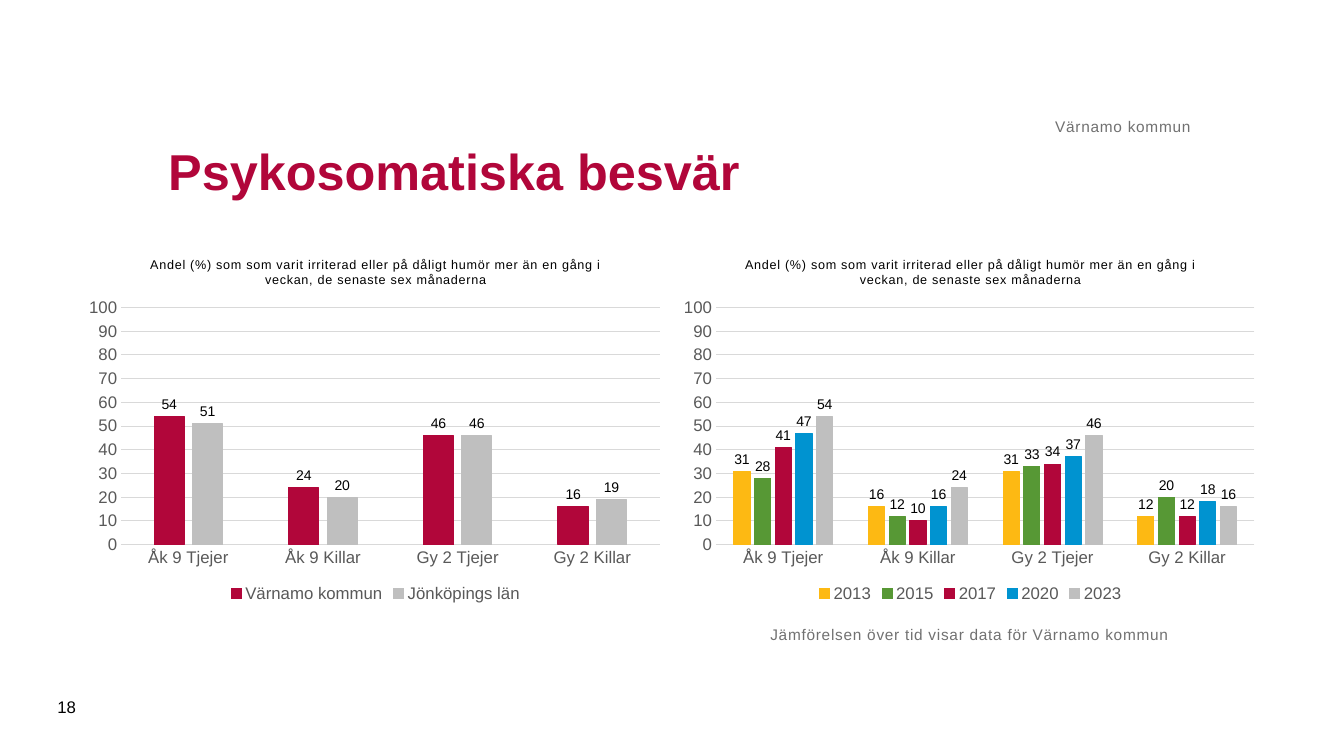
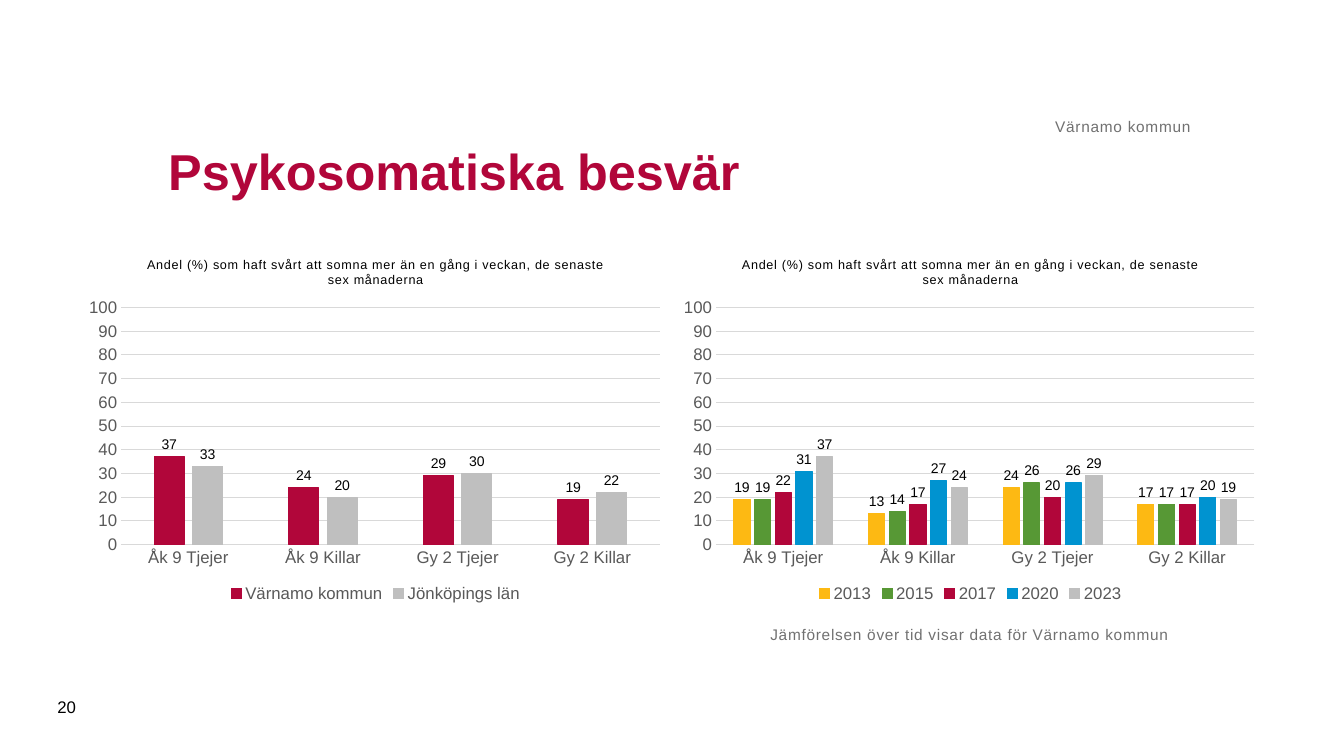
from lxml import etree
from pptx import Presentation
from pptx.chart.data import CategoryChartData
from pptx.dml.color import RGBColor
from pptx.enum.chart import XL_CHART_TYPE, XL_LABEL_POSITION, XL_LEGEND_POSITION, XL_TICK_MARK
from pptx.enum.text import MSO_ANCHOR, PP_ALIGN
from pptx.oxml.ns import qn
from pptx.util import Inches, Pt

COLUMNS = XL_CHART_TYPE.COLUMN_CLUSTERED
OUTSIDE = XL_LABEL_POSITION.OUTSIDE_END
BOTTOM = XL_LEGEND_POSITION.BOTTOM
NO_TICK = XL_TICK_MARK.NONE
LEFT, CENTER, RIGHT = PP_ALIGN.LEFT, PP_ALIGN.CENTER, PP_ALIGN.RIGHT
ANCHOR_TOP, ANCHOR_MIDDLE, ANCHOR_BOTTOM = MSO_ANCHOR.TOP, MSO_ANCHOR.MIDDLE, MSO_ANCHOR.BOTTOM


class Theme:
    font = "Arial"
    black = RGBColor.from_string("000000")
    red = RGBColor.from_string("B1063A")
    silver = RGBColor.from_string("BFBFBF")
    yellow = RGBColor.from_string("FDB913")
    green = RGBColor.from_string("579835")
    blue = RGBColor.from_string("0093D0")
    axis_text = RGBColor.from_string("595959")
    note = RGBColor.from_string("717171")
    grid = RGBColor.from_string("D9D9D9")
    title_size = 36
    axis_size = 12
    note_size = 11
    label_size = 10
    chart_title_size = 9
    hairline = Pt(0.75)
    number_format = "#,##0;#,##0"


CATEGORIES = ["Åk 9 Tjejer", "Åk 9 Killar", "Gy 2 Tjejer", "Gy 2 Killar"]
REGIONS = [("Värnamo kommun", Theme.red), ("Jönköpings län", Theme.silver)]
YEARS = [("2013", Theme.yellow), ("2015", Theme.green), ("2017", Theme.red),
         ("2020", Theme.blue), ("2023", Theme.silver)]
CHART_LEFTS = [0.79, 6.69]
PLOT_BOX = [("x", 0.07), ("y", 0.18), ("w", 0.91), ("h", 0.65)]

SLIDES = [
    {
        "number": "18",
        "question": "Andel (%) som som varit irriterad eller på dåligt humör mer än en gång i veckan, "
                    "de senaste sex månaderna",
        "regions": [[54, 24, 46, 16], [51, 20, 46, 19]],
        "years": [[31, 16, 31, 12], [28, 12, 33, 20], [41, 10, 34, 12],
                  [47, 16, 37, 18], [54, 24, 46, 16]],
    },
    {
        "number": "20",
        "question": "Andel (%) som haft svårt att somna mer än en gång i veckan, "
                    "de senaste sex månaderna",
        "regions": [[37, 24, 29, 19], [33, 20, 30, 22]],
        "years": [[19, 13, 24, 17], [19, 14, 26, 17], [22, 17, 20, 17],
                  [31, 27, 26, 20], [37, 24, 29, 19]],
    },
]


def write(tf, text, size=Theme.note_size, color=Theme.note, bold=False, align=LEFT,
          anchor=None, inset=True, spacing=0):
    if anchor is not None:
        tf.word_wrap = True
        tf.vertical_anchor = anchor
    if not inset:
        tf.margin_left = tf.margin_top = tf.margin_right = tf.margin_bottom = 0
    p = tf.paragraphs[0]
    p.alignment = align
    r = p.add_run()
    r.text = text
    style_font(r.font, size, color, bold)
    if spacing:
        r._r.get_or_add_rPr().set("spc", str(int(spacing * 100)))


def style_font(font, size, color, bold=False):
    font.name = Theme.font
    font.size = Pt(size)
    font.color.rgb = color
    font.bold = bold


prs = Presentation()
prs.slide_width, prs.slide_height = Inches(13.33), Inches(7.5)

for content in SLIDES:
    s = prs.slides.add_slide(prs.slide_layouts[6])

    charts = [(REGIONS, content["regions"]), (YEARS, content["years"])]
    for left, (legend, rows) in zip(CHART_LEFTS, charts):
        data = CategoryChartData(number_format=Theme.number_format)
        data.categories = CATEGORIES
        for (name, color), values in zip(legend, rows):
            data.add_series(name, values)
        chart = s.shapes.add_chart(COLUMNS, Inches(left), Inches(2.4),
                                   Inches(5.87), Inches(3.62), data).chart
        style_font(chart.font, Theme.label_size, Theme.black)
        chart.has_title = True
        write(chart.chart_title.text_frame, content["question"], size=Theme.chart_title_size,
              color=Theme.black, align=CENTER, spacing=0.5)

        chart.has_legend = True
        chart.legend.position = BOTTOM
        chart.legend.include_in_layout = False
        style_font(chart.legend.font, Theme.axis_size, Theme.axis_text)

        for axis in (chart.category_axis, chart.value_axis):
            axis.major_tick_mark = axis.minor_tick_mark = NO_TICK
            style_font(axis.tick_labels.font, Theme.axis_size, Theme.axis_text)
        value_axis = chart.value_axis
        value_axis.minimum_scale, value_axis.maximum_scale = 0, 100
        value_axis.major_unit = 10
        value_axis.tick_labels.number_format = Theme.number_format
        value_axis.tick_labels.number_format_is_linked = False
        value_axis.format.line.fill.background()
        for line in (chart.category_axis.format.line, value_axis.major_gridlines.format.line):
            line.color.rgb = Theme.grid
            line.width = Theme.hairline

        plot = chart.plots[0]
        plot.gap_width, plot.overlap = 219, -27
        plot.vary_by_categories = False
        for series, (name, color) in zip(plot.series, legend):
            series.format.fill.solid()
            series.format.fill.fore_color.rgb = color
            series.format.line.color.rgb = color
            series.format.line.width = Theme.hairline
            labels = series.data_labels
            labels.show_value = True
            labels.position = OUTSIDE
            labels.number_format = Theme.number_format
            labels.number_format_is_linked = False
            style_font(labels.font, Theme.label_size, Theme.black)

        plot_area = chart._chartSpace.chart.plotArea
        layout = plot_area.find(qn("c:layout"))
        if layout is None:
            layout = etree.Element(qn("c:layout"))
            plot_area.insert(0, layout)
        manual = etree.SubElement(layout, qn("c:manualLayout"))
        settings = [("layoutTarget", "inner"), ("xMode", "edge"), ("yMode", "edge")] + PLOT_BOX
        for tag, value in settings:
            etree.SubElement(manual, qn("c:" + tag)).set("val", str(value))

    texts = [
        ("Psykosomatiska besvär", (1.57, 0.98, 10.24, 1.42),
         dict(size=Theme.title_size, color=Theme.red, bold=True, anchor=ANCHOR_MIDDLE)),
        ("Jämförelsen över tid visar data för Värnamo kommun", (7.64, 6.2, 5.31, 0.94),
         dict(anchor=ANCHOR_TOP, inset=False, spacing=0.5)),
        ("Värnamo kommun", (1.57, 0.62, 10.24, 0.73),
         dict(align=RIGHT, anchor=ANCHOR_BOTTOM, inset=False, spacing=0.5)),
        (content["number"], (0.47, 6.81, 0.57, 0.4),
         dict(size=Theme.axis_size, color=Theme.black, anchor=ANCHOR_MIDDLE)),
    ]
    for text, box, style in texts:
        sp = s.shapes.add_textbox(*map(Inches, box))
        write(sp.text_frame, text, **style)

prs.save("out.pptx")
